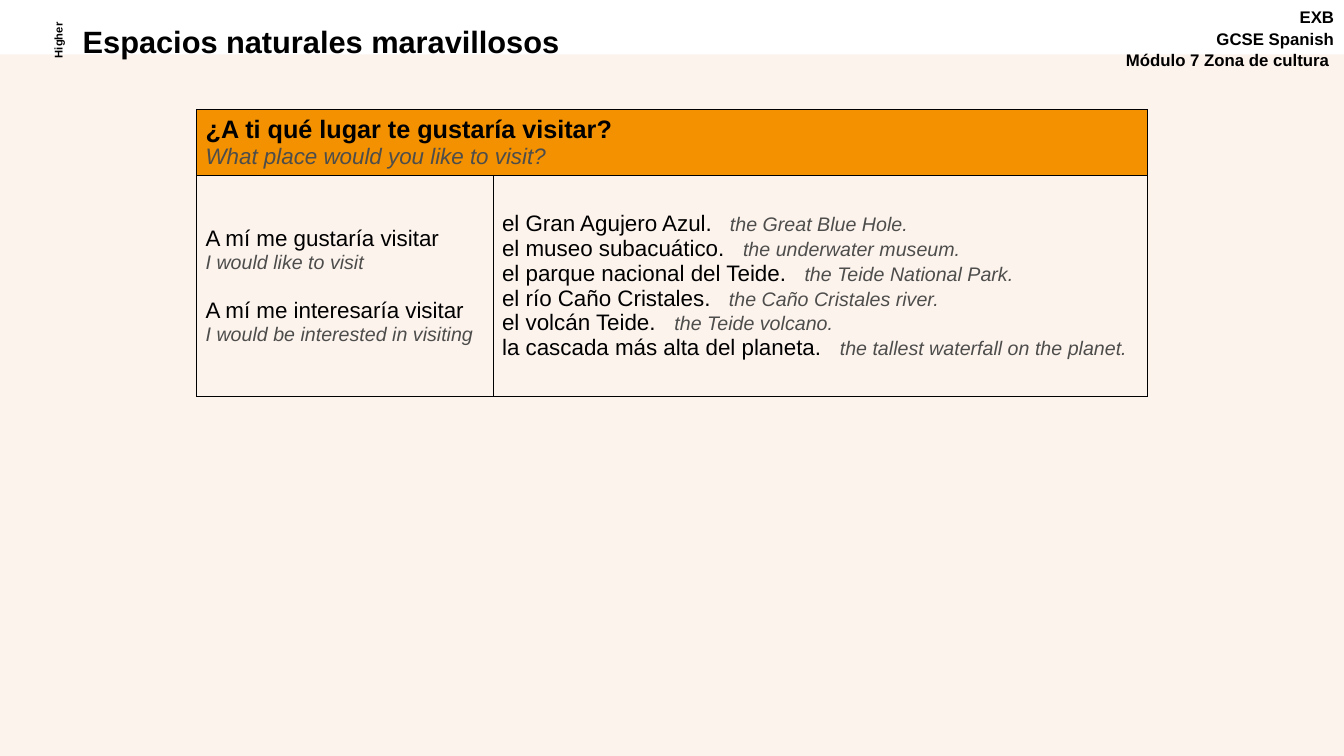
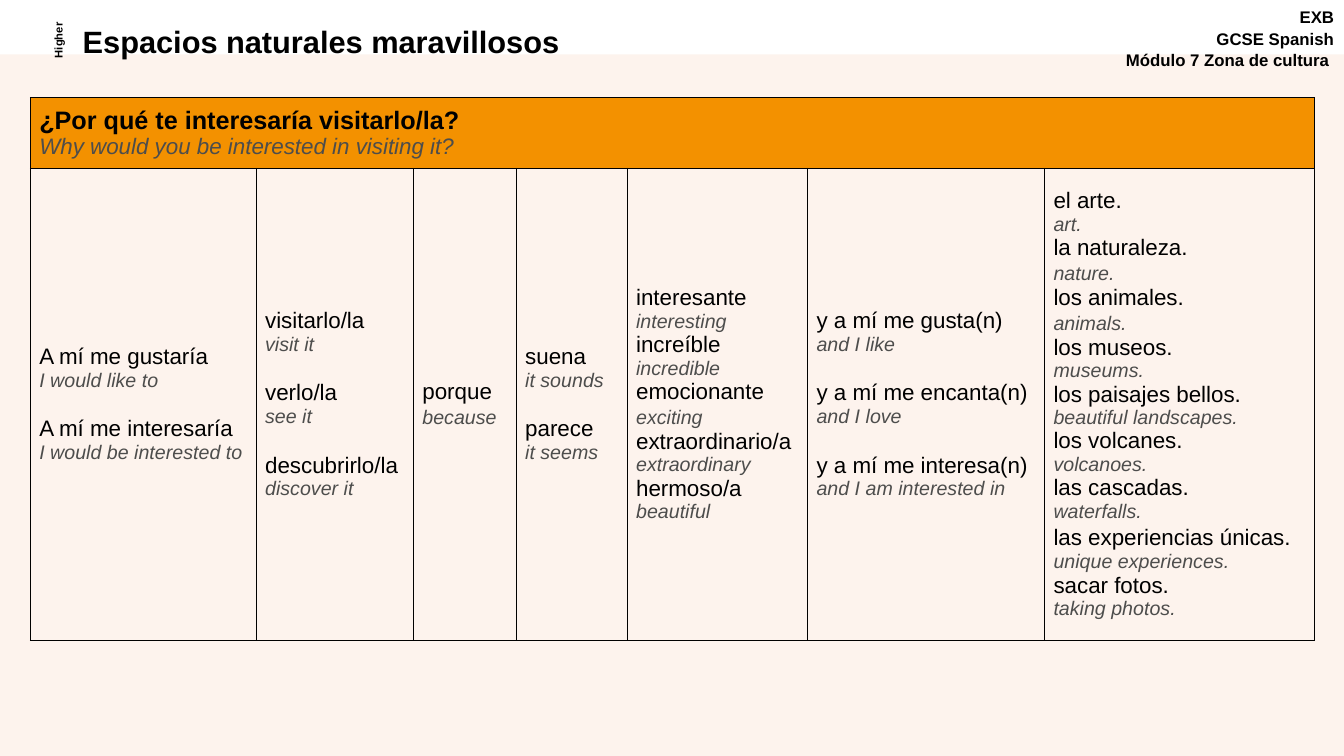
from dataclasses import dataclass

from lxml.etree import SubElement
from pptx import Presentation
from pptx.dml.color import RGBColor
from pptx.enum.shapes import MSO_SHAPE
from pptx.enum.text import MSO_ANCHOR, PP_ALIGN
from pptx.oxml import parse_xml
from pptx.oxml.ns import nsdecls, qn
from pptx.util import Inches, Pt


@dataclass(frozen=True)
class Theme:
    """Colours, font and type sizes of the deck."""
    font: str = "Arial"
    ink: str = "000000"
    translation: str = "4D4D4C"
    panel: str = "FDF3ED"
    heading: str = "F39100"
    title_size: int = 22
    question_size: int = 18
    spanish_size: int = 16
    english_size: int = 14
    course_size: int = 12
    tier_size: int = 8
    border_width: float = 0.75
    group_gap: int = 18


THEME = Theme()


@dataclass(frozen=True)
class Phrase:
    """A Spanish phrase and its translation, on one line if a tab is given."""
    spanish: str
    english: str
    tab: float = 0


@dataclass(frozen=True)
class Column:
    """A table column with its phrases and the space between them."""
    width: float
    phrases: list
    gap: float = 0


def style_run(run, size, color=THEME.ink, bold=False, italic=False):
    """Format one run."""
    font = run.font
    font.name = THEME.font
    font.size = Pt(size)
    font.bold = bold
    font.italic = italic
    font.color.rgb = RGBColor.from_string(color)


def add_run(paragraph, text, size, **style):
    """Add a formatted run to a paragraph."""
    run = paragraph.add_run()
    run.text = text
    style_run(run, size, **style)


def add_words(paragraph, text, size, space_size, **style):
    """Add text whose trailing space, if any, has its own size."""
    words = text.rstrip(" ")
    add_run(paragraph, words, size, **style)
    if words != text:
        add_run(paragraph, " ", space_size)


def add_spanish(paragraph, text):
    """Add a Spanish phrase."""
    add_words(paragraph, text, THEME.spanish_size, THEME.question_size)


def add_english(paragraph, text):
    """Add an English translation."""
    add_words(paragraph, text, THEME.english_size, THEME.spanish_size,
              color=THEME.translation, italic=True)


def next_paragraph(text_frame):
    """Return the empty first paragraph or a new one."""
    first = text_frame.paragraphs[0]
    return text_frame.add_paragraph() if first.runs else first


def add_tab_stop(paragraph, position):
    """Give a paragraph one left tab stop."""
    tabs = SubElement(paragraph._p.get_or_add_pPr(), qn("a:tabLst"))
    SubElement(tabs, qn("a:tab"), pos=str(Inches(position)), algn="l")


def add_phrase(text_frame, phrase, gap):
    """Write a phrase and its translation into a cell."""
    paragraph = next_paragraph(text_frame)
    if gap:
        paragraph.space_before = Pt(gap)
    if phrase.tab:
        add_tab_stop(paragraph, phrase.tab)
        add_spanish(paragraph, phrase.spanish + "\t")
    else:
        add_spanish(paragraph, phrase.spanish)
        paragraph = text_frame.add_paragraph()
    add_english(paragraph, phrase.english)


def format_cell(cell):
    """Set insets, anchor, borders and an empty fill."""
    cell.margin_left = cell.margin_right = Inches(0.09)
    cell.margin_top = cell.margin_bottom = Inches(0.04)
    cell.vertical_anchor = MSO_ANCHOR.MIDDLE
    cell.fill.background()
    properties = cell._tc.get_or_add_tcPr()
    for index, side in enumerate("LRTB"):
        properties.insert(index, parse_xml(
            f'<a:ln{side} {nsdecls("a")} w="{Pt(THEME.border_width)}"><a:solidFill>'
            f'<a:srgbClr val="{THEME.ink}"/></a:solidFill></a:ln{side}>'))


def add_phrase_table(slide, left, top, row_heights, question, columns):
    """Add a question heading above columns of phrases."""
    width = sum(column.width for column in columns)
    table = slide.shapes.add_table(
        2, len(columns), Inches(left), Inches(top),
        Inches(width), Inches(sum(row_heights))).table
    table.first_row = table.horz_banding = False
    for row, height in zip(table.rows, row_heights):
        row.height = Inches(height)
    for cell in table.iter_cells():
        format_cell(cell)

    heading = table.cell(0, 0)
    heading.merge(table.cell(0, len(columns) - 1))
    heading.fill.solid()
    heading.fill.fore_color.rgb = RGBColor.from_string(THEME.heading)
    text_frame = heading.text_frame
    add_run(text_frame.paragraphs[0], question.spanish, THEME.question_size, bold=True)
    add_run(text_frame.add_paragraph(), question.english, THEME.spanish_size,
            color=THEME.translation, italic=True)

    for index, column in enumerate(columns):
        table.columns[index].width = Inches(column.width)
        text_frame = table.cell(1, index).text_frame
        for number, phrase in enumerate(column.phrases):
            add_phrase(text_frame, phrase, column.gap if number else 0)


def add_label(slide, box, lines, size, alignment, line_gap=0):
    """Add a bold text box and return it."""
    label = slide.shapes.add_textbox(*map(Inches, box))
    text_frame = label.text_frame
    text_frame.word_wrap = True
    for number, line in enumerate(lines):
        paragraph = next_paragraph(text_frame)
        paragraph.alignment = alignment
        if number and line_gap:
            paragraph.space_before = Pt(line_gap)
        add_run(paragraph, line, size, bold=True)
    return label


def add_panel(slide):
    """Add the tinted panel behind everything else."""
    panel = slide.shapes.add_shape(
        MSO_SHAPE.RECTANGLE, 0, Inches(0.54), Inches(13.33), Inches(6.96))
    panel.shadow.inherit = False
    panel.fill.solid()
    panel.fill.fore_color.rgb = RGBColor.from_string(THEME.panel)
    panel.line.fill.background()
    slide.shapes._spTree.insert(2, panel._element)


def set_title(slide, text):
    """Place and format the title placeholder."""
    title = slide.shapes.title
    title.left, title.top, title.width, title.height = map(
        Inches, (0.72, 0.19, 8.53, 0.43))
    text_frame = title.text_frame
    text_frame.text = text
    text_frame.vertical_anchor = MSO_ANCHOR.MIDDLE
    paragraph = text_frame.paragraphs[0]
    paragraph.alignment = PP_ALIGN.LEFT
    style_run(paragraph.runs[0], THEME.title_size, bold=True)


def add_unit_slide(presentation):
    """Add a slide with the panel, course, title and tier."""
    slide = presentation.slides.add_slide(presentation.slide_layouts[5])
    add_panel(slide)
    set_title(slide, "Espacios naturales maravillosos")
    add_label(slide, (10.99, 0.02, 2.34, 0.77),
              ["EXB", "GCSE Spanish", "Módulo 7 Zona de cultura "],
              THEME.course_size, PP_ALIGN.RIGHT, line_gap=0.8)
    tier = add_label(slide, (0.18, 0.29, 0.78, 0.22), ["Higher"],
                     THEME.tier_size, PP_ALIGN.CENTER)
    tier.rotation = 270
    return slide


def add_places_slide(presentation):
    """Add the slide on places to visit."""
    add_phrase_table(
        add_unit_slide(presentation), 1.95, 1.09, (0.62, 2.2),
        Phrase("¿A ti qué lugar te gustaría visitar?",
               "What place would you like to visit?"),
        [Column(2.94, [
            Phrase("A mí me gustaría visitar", "I would like to visit"),
            Phrase("A mí me interesaría visitar", "I would be interested in visiting"),
        ], THEME.group_gap),
         Column(6.49, [
             Phrase("el Gran Agujero Azul.", "the Great Blue Hole.", 2.26),
             Phrase("el museo subacuático.", "the underwater museum.", 2.39),
             Phrase("el parque nacional del Teide.", "the Teide National Park.", 3),
             Phrase("el río Caño Cristales.", "the Caño Cristales river.", 2.25),
             Phrase("el volcán Teide.", "the Teide volcano.", 1.71),
             Phrase("la cascada más alta del planeta.",
                    "the tallest waterfall on the planet.", 3.35),
         ])])


def add_reasons_slide(presentation):
    """Add the slide on reasons for a visit."""
    add_phrase_table(
        add_unit_slide(presentation), 0.3, 0.97, (0.7, 4.36),
        Phrase("¿Por qué te interesaría visitarlo/la?",
               "Why would you be interested in visiting it?"),
        [Column(2.24, [
            Phrase("A mí me gustaría", "I would like to"),
            Phrase("A mí me interesaría", "I would be interested to"),
        ], THEME.group_gap),
         Column(1.56, [
             Phrase("visitarlo/la", "visit it"),
             Phrase("verlo/la", "see it"),
             Phrase("descubrirlo/la", "discover it"),
         ], THEME.group_gap),
         Column(1.02, [Phrase("porque", "because ")]),
         Column(1.1, [
             Phrase("suena", "it sounds"),
             Phrase("parece", "it seems"),
         ], THEME.group_gap),
         Column(1.79, [
             Phrase("interesante", "interesting"),
             Phrase("increíble", "incredible"),
             Phrase("emocionante", "exciting "),
             Phrase("extraordinario/a", "extraordinary"),
             Phrase("hermoso/a", "beautiful"),
         ]),
         Column(2.35, [
             Phrase("y a mí me gusta(n)", "and I like"),
             Phrase("y a mí me encanta(n)", "and I love"),
             Phrase("y a mí me interesa(n)", "and I am interested in"),
         ], THEME.group_gap),
         Column(2.68, [
             Phrase("el arte.", "art."),
             Phrase("la naturaleza.", "nature. "),
             Phrase("los animales.", "animals. "),
             Phrase("los museos.", "museums."),
             Phrase("los paisajes bellos.", "beautiful landscapes."),
             Phrase("los volcanes.", "volcanoes."),
             Phrase("las cascadas.", "waterfalls."),
             Phrase("las experiencias únicas. ", "unique experiences."),
             Phrase("sacar fotos.", "taking photos."),
         ])])


def main():
    """Build and save the deck."""
    presentation = Presentation()
    presentation.slide_width = Inches(13.33)
    presentation.slide_height = Inches(7.5)
    add_places_slide(presentation)
    add_reasons_slide(presentation)
    presentation.save("out.pptx")


if __name__ == "__main__":
    main()
